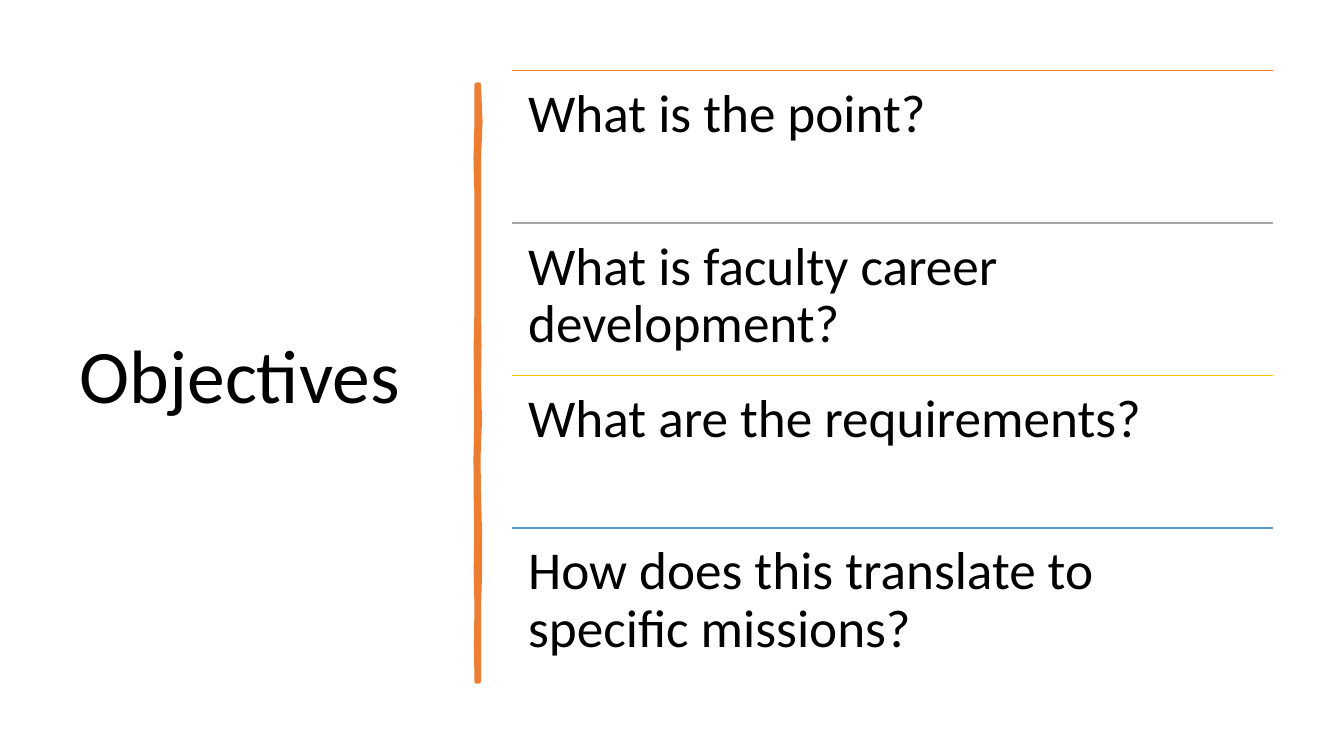
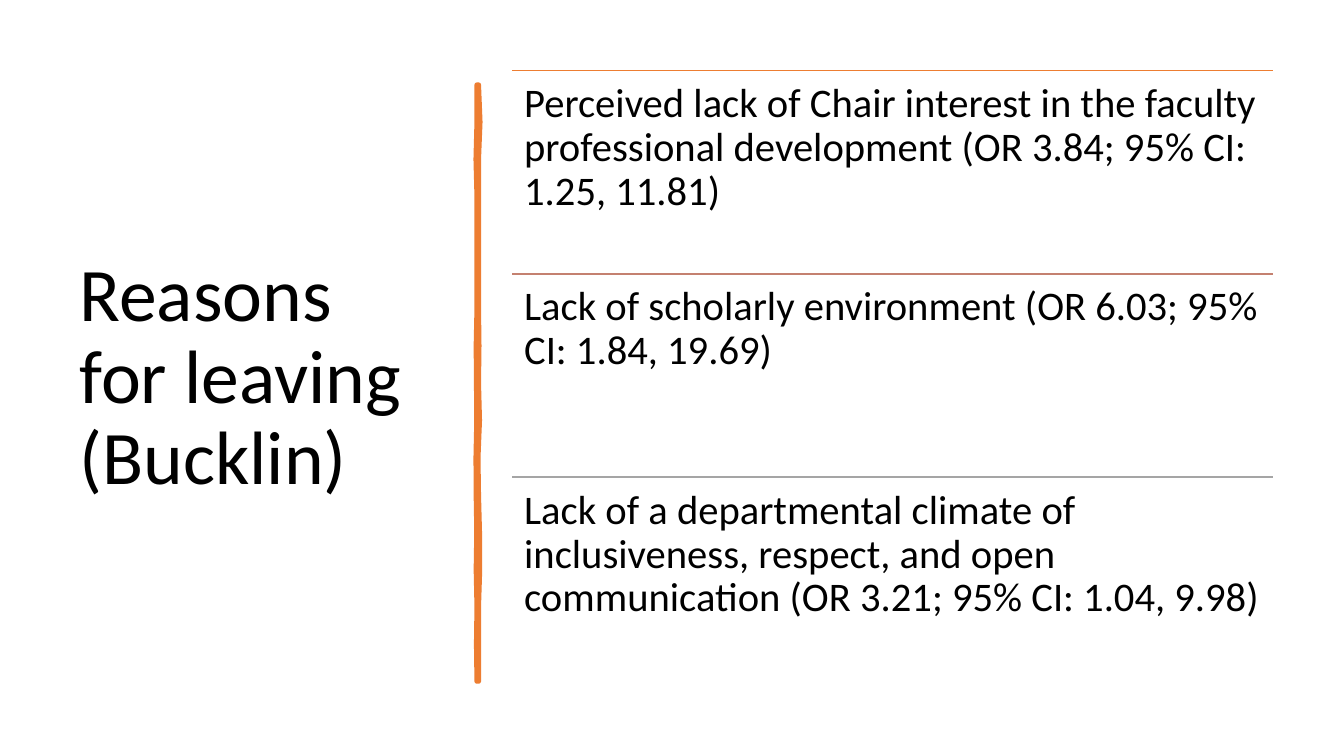
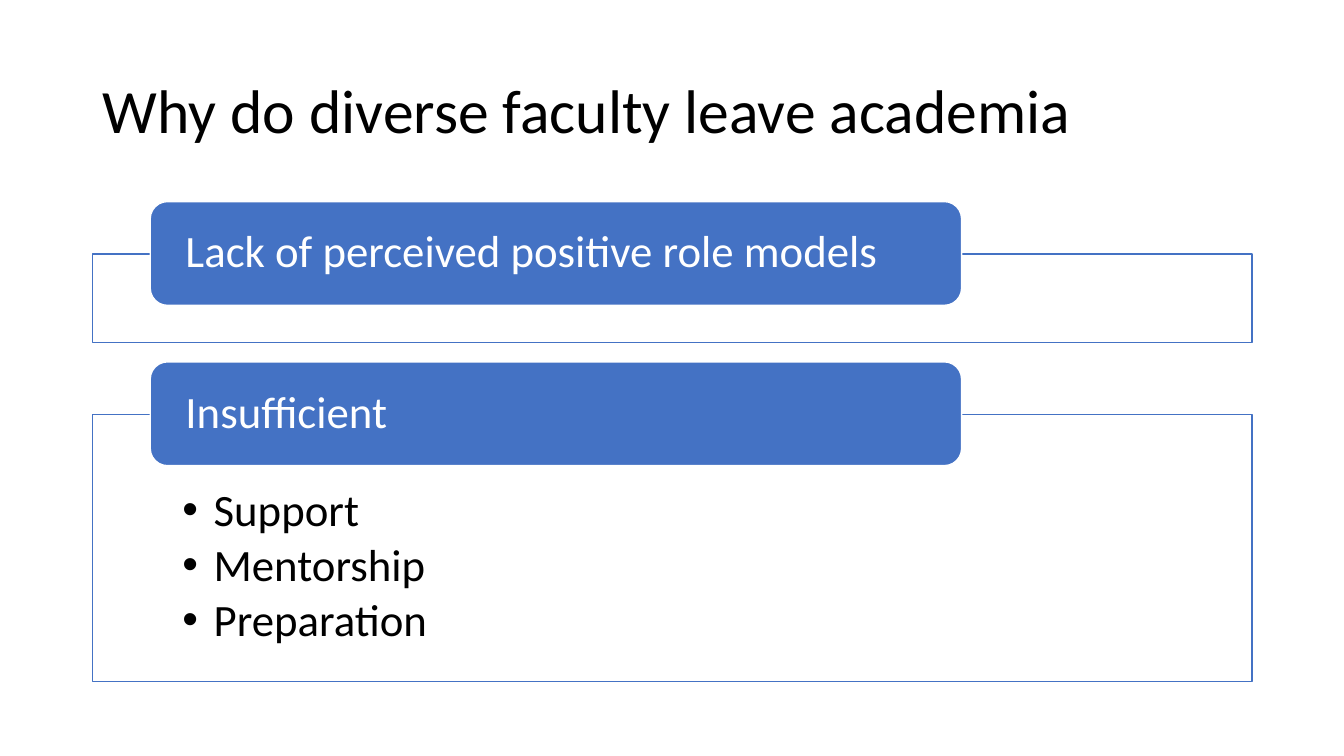
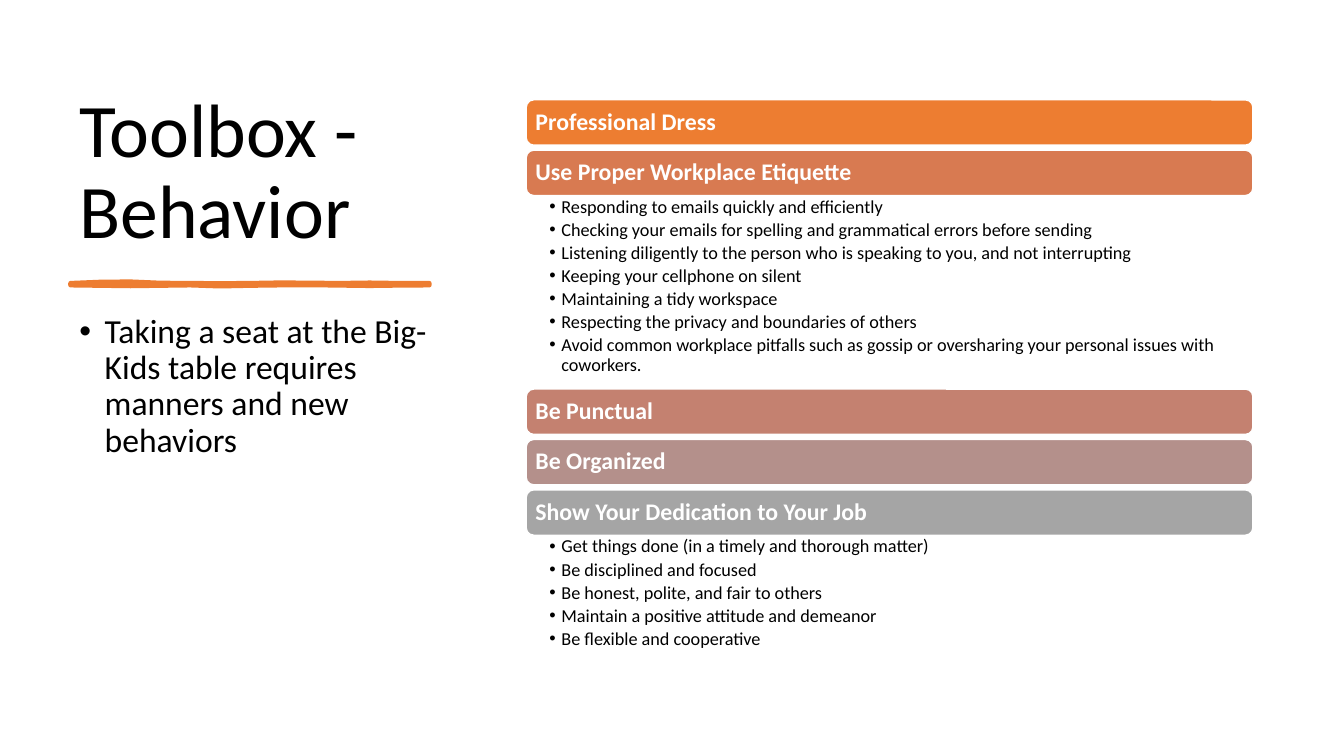
from lxml import etree
from pptx import Presentation
from pptx.dml.color import RGBColor
from pptx.enum.shapes import MSO_CONNECTOR, MSO_SHAPE
from pptx.enum.text import MSO_ANCHOR, MSO_AUTO_SIZE, PP_ALIGN
from pptx.oxml.ns import qn
from pptx.util import Pt

PX = 9144  # one hundredth of an inch
FONT = "Calibri"

BLACK = RGBColor(0x00, 0x00, 0x00)
WHITE = RGBColor(0xFF, 0xFF, 0xFF)
ORANGE = RGBColor(0xED, 0x7D, 0x31)
RUST = RGBColor(0xD8, 0x7A, 0x51)
ROSE = RGBColor(0xC4, 0x81, 0x70)
MAUVE = RGBColor(0xB4, 0x90, 0x8B)
GRAY = RGBColor(0xA5, 0xA5, 0xA5)
GOLD = RGBColor(0xFF, 0xC0, 0x00)
SKY = RGBColor(0x5B, 0x9B, 0xD5)
BLUE = RGBColor(0x44, 0x72, 0xC4)

LEFT = PP_ALIGN.LEFT
TOP, MID, LOW = MSO_ANCHOR.TOP, MSO_ANCHOR.MIDDLE, MSO_ANCHOR.BOTTOM
FIXED = MSO_AUTO_SIZE.NONE
RECT, ROUND = MSO_SHAPE.RECTANGLE, MSO_SHAPE.ROUNDED_RECTANGLE
LINE = MSO_CONNECTOR.STRAIGHT

# Edge offsets of each brush stroke, in tenths of a px, at equal steps
TALL = ((0, 15, 0, 0, 0, 0, 0, 5, 0, 10, -5, 0, 10, 12, 0, 0, 0),
        (-20, -20, -30, -20, -20, -20, -20, -28, -25, -22, -30, -28, -22,
         -28, -20, -25, -20))
WIDE = ((0, -12, -15, -2, 0, 2, 0, -5, -3, 0, -4, 0, 0),
        (20, 24, 28, 24, 20, 30, 24, 20, 18, 22, 26, 22, 20))


def px(*nums):
    return [round(n * PX) for n in nums]


def put(thing, **vals):
    for name, val in vals.items():
        setattr(thing, name, val)


def write(shape, lines, size, color=BLACK, bold=False, anchor=TOP,
          pad=(10, 5, 10, 5), after=0, hang=0):
    """Fill a shape with paragraphs; hang is the bullet indent, 0 for none."""
    left, top, right, low = px(*pad)
    frame = shape.text_frame
    put(frame, text="\n".join(lines), word_wrap=True, auto_size=FIXED,
        vertical_anchor=anchor, margin_left=left, margin_top=top,
        margin_right=right, margin_bottom=low)
    for para in frame.paragraphs:
        put(para, alignment=LEFT, line_spacing=0.9, space_before=Pt(0),
            space_after=Pt(after))
        put(para.runs[0].font, name=FONT, size=Pt(size), bold=bold)
        para.runs[0].font.color.rgb = color
        if hang:
            props = para._p.get_or_add_pPr()
            props.set("marL", str(hang * PX))
            props.set("indent", str(-hang * PX))
            face = etree.SubElement(props, qn("a:buFont"))
            face.set("typeface", "Arial")
            etree.SubElement(props, qn("a:buChar")).set("char", "•")


def start(deck, title, box, size=54, anchor=MID):
    slide = deck.slides.add_slide(deck.slide_layouts[5])
    head = slide.shapes.title
    left, top, width, height = px(*box)
    put(head, left=left, top=top, width=width, height=height)
    write(head, [title], size, anchor=anchor)
    return slide


def note(slide, box, lines, size, **form):
    write(slide.shapes.add_textbox(*px(*box)), lines, size, **form)


def paint(shape, fill, line, width=1):
    shape.shadow.inherit = False
    shape.fill.solid()
    shape.fill.fore_color.rgb = fill
    shape.line.color.rgb = line
    shape.line.width = Pt(width)


def block(slide, kind, box, fill, line):
    shape = slide.shapes.add_shape(kind, *px(*box))
    paint(shape, fill, line)
    return shape


def rule(slide, x, y, width, color):
    line = slide.shapes.add_connector(LINE, *px(x, y, x + width, y))
    line.line.color.rgb = color
    line.line.width = Pt(1)
    etree.SubElement(line._element.spPr, qn("a:effectLst"))


def brush(slide, x, y, span, edges, tall):
    """Draw a hand-made stroke from x, y, running down if tall."""
    near, far = edges
    step = span * 10 / (len(near) - 1)
    route = [(i * step, off) for i, off in enumerate(near)]
    route += [(i * step, off) for i, off in enumerate(far)][::-1]
    dots = [(x * 10 + (off if tall else run), y * 10 + (run if tall else off))
            for run, off in route]
    pen = slide.shapes.build_freeform(*dots[0], scale=PX / 10)
    pen.add_line_segments(dots[1:], close=True)
    paint(pen.convert_to_shape(), ORANGE, ORANGE, 3.25)


def ruled(deck, title, rows, size, pad):
    """Build a slide with a side title and equal rows under thin rules."""
    slide = start(deck, title, (69, 70, 374, 611))
    brush(slide, 475, 84, 592, TALL, True)
    high = 605 / len(rows)
    for i, (color, text) in enumerate(rows):
        y = 70 + i * high
        rule(slide, 508, y, 755, color)
        note(slide, (508, y, 755, high), [text], size, pad=(pad,) * 4)


def causes(deck):
    slide = start(deck, "Why do diverse faculty leave academia",
                  (92, 40, 1150, 145), size=44)
    cards = [
        (200, 88, "Lack of perceived positive role models", []),
        (359, 265, "Insufficient", ["Support", "Mentorship", "Preparation"]),
    ]
    for y, high, label, items in cards:
        frame = block(slide, RECT, (92, y + 52, 1150, high), WHITE, BLUE)
        if items:
            write(frame, items, 32, pad=(89, 73, 89, 25), after=4.5, hang=31)
        bar = block(slide, ROUND, (149, y, 805, 103), BLUE, WHITE)
        write(bar, [label], 32, WHITE, anchor=MID, pad=(30, 0, 30, 0))


def toolbox(deck):
    slide = start(deck, "Toolbox - Behavior", (69, 70, 375, 188), anchor=LOW)
    brush(slide, 70, 281, 356, WIDE, False)
    note(slide, (69, 307, 375, 373),
         ["Taking a seat at the Big-Kids table requires manners and new "
          "behaviors"], 24, hang=25)
    parts = [
        (ORANGE, "Professional Dress", 5, []),
        (RUST, "Use Proper Workplace Etiquette", 192, [
            "Responding to emails quickly and efficiently",
            "Checking your emails for spelling and grammatical errors before "
            "sending",
            "Listening diligently to the person who is speaking to you, and "
            "not interrupting",
            "Keeping your cellphone on silent",
            "Maintaining a tidy workspace",
            "Respecting the privacy and boundaries of others",
            "Avoid common workplace pitfalls such as gossip or oversharing "
            "your personal issues with coworkers.",
        ]),
        (ROSE, "Be Punctual", 5, []),
        (MAUVE, "Be Organized", 5, []),
        (GRAY, "Show Your Dedication to Your Job", 123, [
            "Get things done (in a timely and thorough matter)",
            "Be disciplined and focused",
            "Be honest, polite, and fair to others",
            "Maintain a positive attitude and demeanor",
            "Be flexible and cooperative",
        ]),
    ]
    y = 99
    for color, label, below, items in parts:
        bar = block(slide, ROUND, (522, y, 721, 45), color, WHITE)
        write(bar, [label], 17, WHITE, bold=True, anchor=MID, pad=(7,) * 4)
        y += 45
        if items:
            note(slide, (522, y, 721, below), items, 13,
                 pad=(23, 2, 13, 2), after=2.4, hang=12)
        y += below


def main():
    deck = Presentation()
    wide, high = px(1333.33, 750)
    put(deck, slide_width=wide, slide_height=high)
    ruled(deck, "Objectives", [
        (ORANGE, "What is the point?"),
        (GRAY, "What is faculty career development?"),
        (GOLD, "What are the requirements?"),
        (SKY, "How does this translate to specific missions?"),
    ], 38, 16)
    ruled(deck, "Reasons for leaving (Bucklin)", [
        (ORANGE, "Perceived lack of Chair interest in the faculty "
                 "professional development (OR 3.84; 95% CI: 1.25, 11.81)"),
        (ROSE, "Lack of scholarly environment (OR 6.03; 95% CI: 1.84, "
               "19.69)"),
        (GRAY, "Lack of a departmental climate of inclusiveness, respect, "
               "and open communication (OR 3.21; 95% CI: 1.04, 9.98)"),
    ], 29, 12)
    causes(deck)
    toolbox(deck)
    deck.save("out.pptx")


if __name__ == "__main__":
    main()
